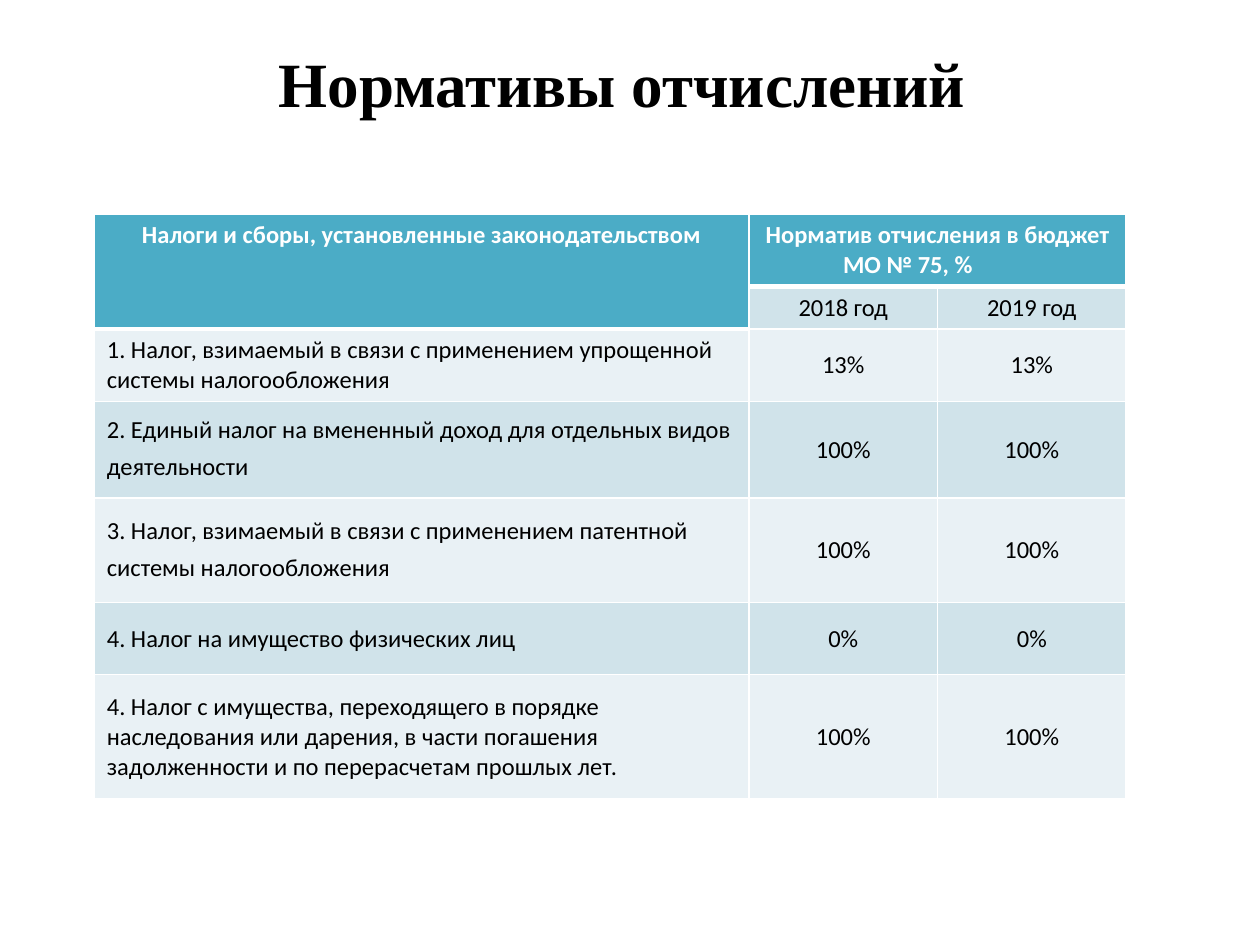
"""Build the slide with the table of tax deduction rates."""
import dataclasses

import pptx
import pptx.dml.color
import pptx.enum.text
import pptx.oxml
import pptx.oxml.ns
import pptx.util

Cm = pptx.util.Cm
Pt = pptx.util.Pt
Align = pptx.enum.text.PP_ALIGN
Anchor = pptx.enum.text.MSO_ANCHOR


@dataclasses.dataclass(frozen=True)
class Theme:
    title_font: str = "Times New Roman"
    table_font: str = "Calibri"
    title_size: int = 36
    table_size: int = 14
    tab_size: int = 18
    black: str = "000000"
    white: str = "FFFFFF"
    header: str = "4BACC6"
    bands: tuple = ("D0E3EA", "E9F1F5")
    border: float = 1
    header_border: float = 3


THEME = Theme()
COLUMN_WIDTHS = (13.2, 3.8, 3.8)
ROW_HEIGHTS = (1.37, 0.81, 1.37, 1.95, 2.11, 1.45, 2.51)
HEADINGS = (
    "Налоги и сборы, установленные законодательством",
    "Норматив отчисления в бюджет МО № 75, %\t",
)
YEARS = ("2018 год", "2019 год")
TAXES = (
    (("1. Налог, взимаемый в связи с применением упрощенной системы налогообложения",), "13%"),
    (("2. Единый налог на вмененный доход для отдельных видов деятельности ", "\t"), "100%"),
    (("3. Налог, взимаемый в связи с применением патентной системы налогообложения ", "\t"), "100%"),
    (("4. Налог на имущество физических лиц",), "0%"),
    (("4. Налог с имущества, переходящего в порядке наследования или дарения, "
      "в части погашения задолженности и по перерасчетам прошлых лет.",), "100%"),
)


def add_run(paragraph, text, font, size, color, bold=False):
    run = paragraph.add_run()
    run.text = text
    run.font.name = font
    run.font.size = Pt(size)
    run.font.bold = bold
    run.font.color.rgb = pptx.dml.color.RGBColor.from_string(color)


def add_border(cell, side, width):
    namespace = pptx.oxml.ns.nsdecls("a")
    line = pptx.oxml.parse_xml(
        f'<a:ln{side} {namespace} w="{Pt(width)}"><a:solidFill>'
        f'<a:srgbClr val="{THEME.white}"/></a:solidFill></a:ln{side}>'
    )
    cell._tc.get_or_add_tcPr().append(line)


def style_cell(cell, fill, bottom=THEME.border):
    for side in "LRT":
        add_border(cell, side, THEME.border)
    add_border(cell, "B", bottom)
    cell.fill.solid()
    cell.fill.fore_color.rgb = pptx.dml.color.RGBColor.from_string(fill)


def write_cell(cell, texts, color=THEME.black, bold=False,
               align=Align.CENTER, anchor=Anchor.MIDDLE):
    cell.vertical_anchor = anchor
    paragraph = cell.text_frame.paragraphs[0]
    paragraph.alignment = align
    for text in texts:
        size = THEME.tab_size if text == "\t" else THEME.table_size
        add_run(paragraph, text, THEME.table_font, size, color, bold)


def add_title(slide, text):
    title = slide.shapes.title
    title.left, title.top, title.width, title.height = Cm(1.27), Cm(0.74), Cm(22.86), Cm(1.83)
    title.text_frame.vertical_anchor = Anchor.MIDDLE
    paragraph = title.text_frame.paragraphs[0]
    paragraph.alignment = Align.CENTER
    add_run(paragraph, text, THEME.title_font, THEME.title_size, THEME.black, bold=True)


def add_header(table):
    table.cell(0, 0).merge(table.cell(1, 0))
    table.cell(0, 1).merge(table.cell(0, 2))
    for row, column in ((0, 0), (0, 1), (0, 2), (1, 0)):
        style_cell(table.cell(row, column), THEME.header, THEME.header_border)
    for column, heading in enumerate(HEADINGS):
        write_cell(table.cell(0, column), (heading,), THEME.white, bold=True, anchor=Anchor.TOP)
    for column, year in enumerate(YEARS, 1):
        style_cell(table.cell(1, column), THEME.bands[0])
        write_cell(table.cell(1, column), (year,), anchor=Anchor.TOP)


def add_tax_row(table, row, name, rate):
    for column in range(len(COLUMN_WIDTHS)):
        cell = table.cell(row, column)
        style_cell(cell, THEME.bands[(row - 1) % 2])
        if column == 0:
            write_cell(cell, name, align=Align.LEFT)
        else:
            write_cell(cell, (rate,))


def add_rates_table(slide):
    table = slide.shapes.add_table(
        len(ROW_HEIGHTS), len(COLUMN_WIDTHS), Cm(1.9), Cm(4.32),
        Cm(sum(COLUMN_WIDTHS)), Cm(sum(ROW_HEIGHTS)),
    ).table
    for column, width in zip(table.columns, COLUMN_WIDTHS):
        column.width = Cm(width)
    for row, height in zip(table.rows, ROW_HEIGHTS):
        row.height = Cm(height)
    add_header(table)
    for row, (name, rate) in enumerate(TAXES, 2):
        add_tax_row(table, row, name, rate)


def main():
    presentation = pptx.Presentation()
    presentation.slide_width, presentation.slide_height = Cm(25.4), Cm(19.05)
    slide = presentation.slides.add_slide(presentation.slide_layouts.get_by_name("Title Only"))
    add_title(slide, "Нормативы отчислений ")
    add_rates_table(slide)
    presentation.save("out.pptx")


if __name__ == "__main__":
    main()
